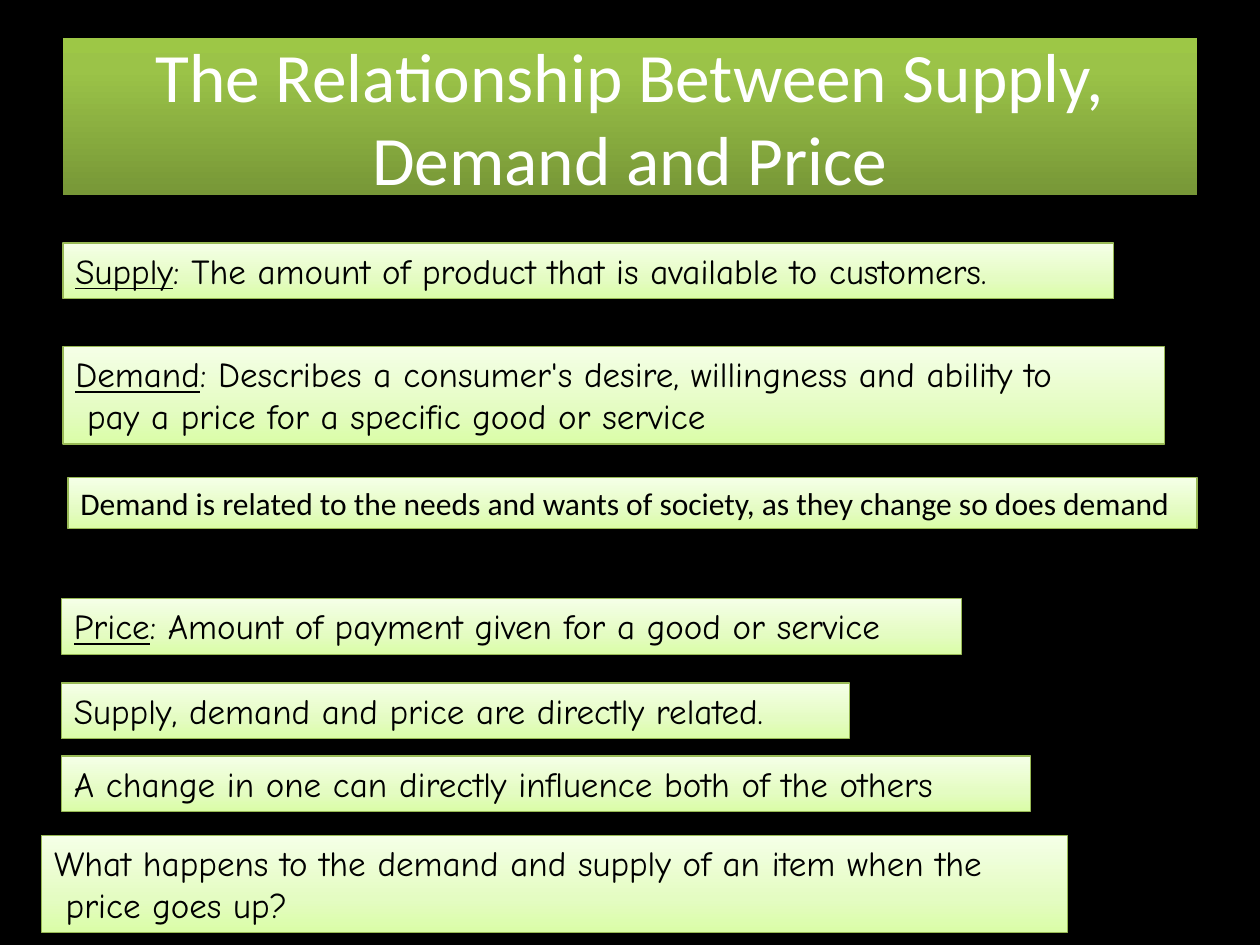
from copy import deepcopy

from pptx import Presentation
from pptx import util as u
from pptx.dml.color import RGBColor
from pptx.enum import text

BLACK = RGBColor(0x00, 0x00, 0x00)
WHITE = RGBColor(0xFF, 0xFF, 0xFF)
EDGE = RGBColor(0x98, 0xB9, 0x55)
# Gradient stops run from the bottom edge to the top edge
GREEN = [(0, RGBColor(0x77, 0x97, 0x37)), (0.8, RGBColor(0x9B, 0xC3, 0x48)),
         (1, RGBColor(0x9D, 0xC7, 0x46))]
PALE = [(0, RGBColor(0xDA, 0xFD, 0xA7)), (0.35, RGBColor(0xE4, 0xFC, 0xC2)),
        (1, RGBColor(0xF5, 0xFF, 0xE7))]
SANS, HAND = "Calibri", "Comic Neue"
ONE, TWO = 1.12, 1.96  # heights of one-line and two-line notes, cm


class Deck:
    """Holds the style and the current slide."""

    def __init__(self):
        self.prs = Presentation()
        self.prs.slide_width, self.prs.slide_height = u.Cm(25.4), u.Cm(19.05)
        self.slide = self.prs.slides.add_slide(self.prs.slide_layouts[6])
        fill = self.slide.background.fill
        fill.solid()
        fill.fore_color.rgb = BLACK

    def shade(self, box, stops):
        box.fill.gradient()
        box.fill.gradient_angle = 90
        last = box.fill._fill._gradFill.gsLst[-1]
        last.addnext(deepcopy(last))
        for stop, (pos, tint) in zip(box.fill.gradient_stops, stops):
            stop.position = pos
            stop.color.rgb = tint

    def panel(self, area, stops):
        box = self.slide.shapes.add_textbox(*(u.Cm(n) for n in area))
        box.text_frame.word_wrap = True
        self.shade(box, stops)
        return box

    def run(self, para, words, font, size, tint, under=False):
        run = para.add_run()
        run.text = words
        run.font.name, run.font.size = font, u.Pt(size)
        run.font.color.rgb = tint
        run.font.underline = under

    def title(self, area, words):
        frame = self.panel(area, GREEN).text_frame
        frame.vertical_anchor = text.MSO_ANCHOR.MIDDLE
        para = frame.paragraphs[0]
        para.alignment = text.PP_ALIGN.CENTER
        self.run(para, words, SANS, 39.6, WHITE)

    def note(self, area, lines, term="", font=HAND, size=20):
        box = self.panel(area, PALE)
        box.line.color.rgb = EDGE
        box.line.width = u.Pt(0.75)
        frame = box.text_frame
        for i, words in enumerate(lines):
            para = frame.add_paragraph() if i else frame.paragraphs[0]
            if term and not i:
                self.run(para, term, font, size, BLACK, under=True)
            self.run(para, words, font, size, BLACK)


def main():
    deck = Deck()

    # Heading
    deck.title((1.27, 0.76, 22.86, 3.18),
               "The Relationship Between Supply, Demand and Price")

    # Definitions
    deck.note((1.27, 4.9, 21.18, ONE),
              [": The amount of product that is available to customers."],
              term="Supply")
    deck.note((1.27, 6.99, 22.2, TWO),
              [": Describes a consumer's desire, willingness and ability to",
               " pay a price for a specific good or service"],
              term="Demand")
    deck.note((1.37, 9.63, 22.76, 1.02),
              ["Demand is related to the needs and wants of society, "
               "as they change so does demand"],
              font=SANS, size=18)
    deck.note((1.24, 12.07, 18.14, ONE),
              [": Amount of payment given for a good or service"],
              term="Price")

    # How they relate
    deck.note((1.24, 13.77, 15.88, ONE),
              ["Supply, demand and price are directly related."])
    deck.note((1.24, 15.24, 19.53, ONE),
              ["A change in one can directly influence both of the others"])

    # Question
    deck.note((0.84, 16.84, 20.68, TWO),
              ["What happens to the demand and supply of an item when the",
               " price goes up?"])

    deck.prs.save("out.pptx")


if __name__ == "__main__":
    main()
